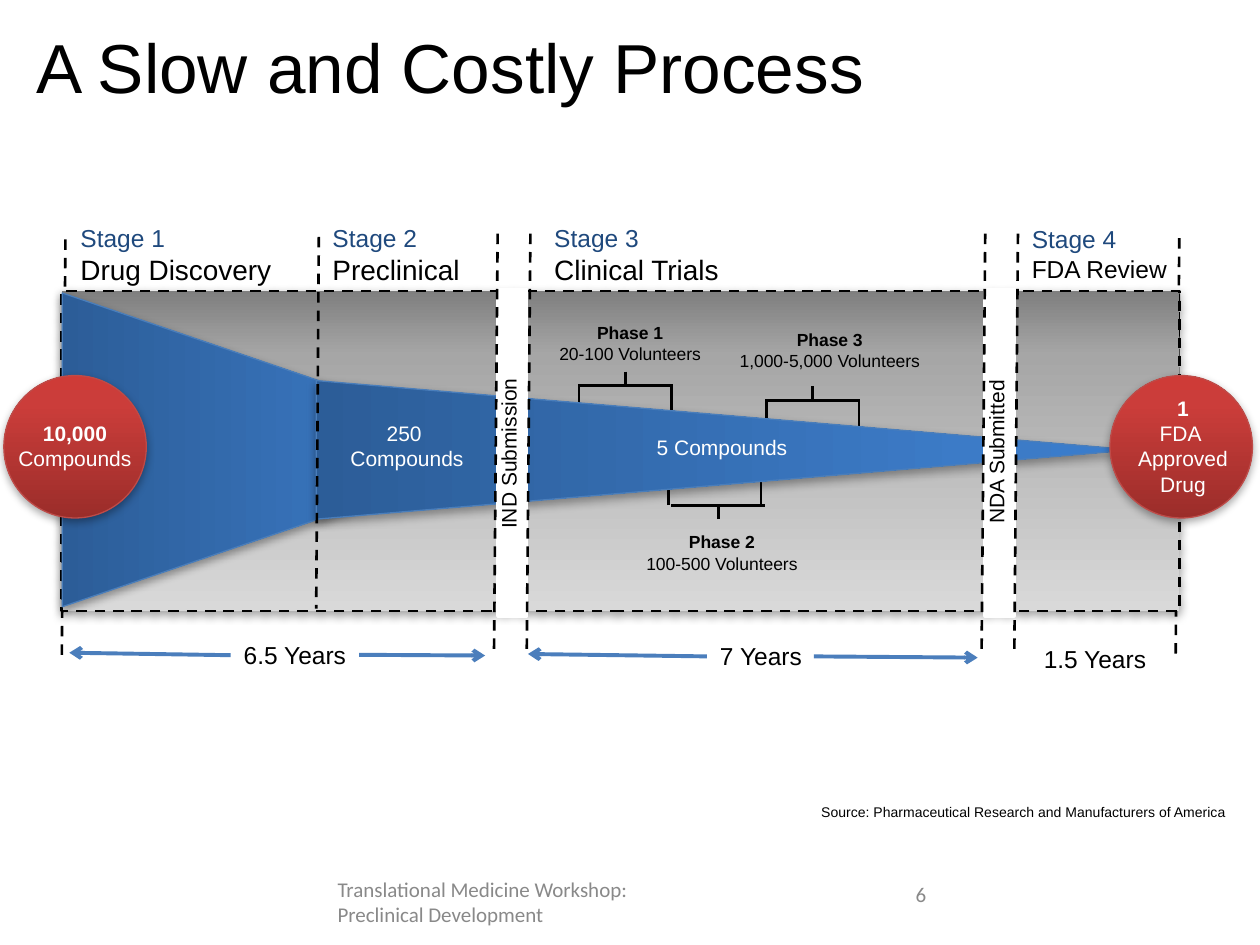
from lxml import etree
from pptx import Presentation, oxml
from pptx import util as u
from pptx.dml import color
from pptx.enum import dml, shapes, text
from pptx.oxml import ns

Pt = u.Pt
HUE = {"black": "000000", "white": "FFFFFF", "navy": "1F497D", "arrow": "4B7EBC",
       "gray": "898989", "blue": "4A7EBB", "red": "BE4B48"}
RGB = {k: color.RGBColor.from_string(v) for k, v in HUE.items()}
GRAD = {"black": ("D9D9D9", "A6A6A6", "7F7F7F"),
        "blue": ("2C5D98", "3C7BC7", "3A7CCB"),
        "red": ("9B2D2A", "CB3D3A", "CE3B37")}
KIND = shapes.MSO_SHAPE
DASH = dml.MSO_LINE.DASH
MID, LEFT = text.PP_ALIGN.CENTER, text.PP_ALIGN.LEFT
A = ns.nsdecls("a")

deck = Presentation()
deck.slide_width, deck.slide_height = Pt(720), Pt(540)
page = deck.slides.add_slide(deck.slide_layouts[6])
tree = page.shapes


def draw(x1, y1, x2, y2, hue="black", wide=1.5, dash=None, head=False):
    item = tree.add_connector(shapes.MSO_CONNECTOR.STRAIGHT, *map(Pt, (x1, y1, x2, y2)))
    item.line.color.rgb = RGB[hue]
    for key, val in {"width": Pt(wide), "dash_style": dash}.items():
        setattr(item.line, key, val)
    if head:
        etree.SubElement(item.line._get_or_add_ln(), ns.qn("a:tailEnd"), type="arrow")
    etree.SubElement(item._element.spPr, ns.qn("a:effectLst"))


def block(kind, box, hue, wide=0.75, dash=None, turn=0):
    item = tree.add_shape(kind, *map(Pt, box))
    item.rotation = turn
    item.line.color.rgb = RGB[hue]
    for key, val in {"width": Pt(wide), "dash_style": dash}.items():
        setattr(item.line, key, val)
    stops = "".join(f'<a:gs pos="{pos}"><a:srgbClr val="{tone}"/></a:gs>'
                    for pos, tone in zip((0, 80000, 100000), GRAD[hue]))
    props = item._element.spPr
    props.insert(2, oxml.parse_xml(
        f'<a:gradFill {A} rotWithShape="1"><a:gsLst>{stops}</a:gsLst>'
        '<a:lin ang="16200000" scaled="0"/></a:gradFill>'))
    props.append(oxml.parse_xml(
        f'<a:effectLst {A}><a:outerShdw blurRad="63500" dist="22860" dir="5400000" '
        f'rotWithShape="0"><a:srgbClr val="{HUE["black"]}"><a:alpha val="35000"/>'
        '</a:srgbClr></a:outerShdw></a:effectLst>'))


draw(673.9, 136.1, 671.8, 377.3, dash=DASH)
draw(37.4, 136.8, 35.3, 378, dash=DASH)
block(KIND.RECTANGLE, (35.3, 166.3, 638.6, 182.9), "black", 1.5, DASH)

for x, y, way, shift in ((357.3, 220.3, 1, 0), (410.4, 288.7, -1, -2), (464.4, 228.8, 1, 0)):
    draw(x, y - 8 * way, x, y)
    draw(x - 27, y, x + 27, y)
    for side in (-26.5, 26.5):
        draw(x + side + shift, y, x + side + shift, y + 15.8 * way)

for box in ((77, 126, 179.3, 262.1), (374.4, 23.8, 79.2, 466.6)):
    block(KIND.FLOWCHART_EXTRACT, box, "blue", turn=90)
for x in (634.3, 2.2):
    block(KIND.OVAL, (x, 214.6, 81.4, 81.4), "red")

for x in (284.4, 563):
    bar = tree.add_shape(KIND.RECTANGLE, *map(Pt, (x, 165.6, 16.6, 186.5)))
    bar.shadow.inherit = False
    bar.fill.solid()
    bar.fill.fore_color.rgb = bar.line.color.rgb = RGB["white"]
    bar.line.width = Pt(2)
    for left in (x, x + 18.7):
        draw(left, 133.5, left - 2.1, 374.6, dash=DASH)
draw(182.2, 135.4, 180.7, 347.8, dash=DASH)

for ends in ((131.8, 374.4, 39.6, 373), (205.2, 374.2, 277.2, 374.6),
             (403.9, 375.1, 301.7, 373.7), (465.1, 375.1, 558.7, 375.8)):
    draw(*ends, hue="arrow", wide=2.25, head=True)

plain = {"size": 12, "hue": "black", "bold": False}
pale = {**plain, "hue": "white"}
small = {**plain, "size": 10}
year = {**plain, "size": 14}
stage = {**year, "hue": "navy"}
topic = {**plain, "size": 16}
foot = {**plain, "hue": "gray", "font": "Calibri"}
bold = {"bold": True}

notes = [
    ((13.7, 12.2, 527.8, 50.4), LEFT, True, 0, [("A Slow and Costly Process", {**plain, "size": 39.6})]),
    ((239.8, 247.7, 101.5, 21.6), LEFT, False, 270, [("IND Submission", plain)]),
    ((520.6, 247, 97.2, 21.6), LEFT, False, 270, [("NDA Submitted", plain)]),
    ((642.2, 222.5, 67.7, 65.5), MID, False, 0,
     [("1", {**pale, **bold}), ("FDA ", pale), ("Approved", pale), ("Drug", pale)]),
    ((2.9, 236.9, 79.9, 36), MID, False, 0, [("10,000", {**pale, **bold}), ("Compounds", pale)]),
    ((175.7, 236.9, 113.8, 36), MID, True, 0, [("250 ", pale), ("Compounds", pale)]),
    ((355.7, 244.8, 113.8, 21.6), MID, True, 0, [("5 Compounds", pale)]),
    ((462.2, 455.8, 247, 17.3), LEFT, False, 0,
     [("Source: Pharmaceutical Research and Manufacturers of America", {**plain, "size": 8})]),
    ((516.2, 500.4, 167.8, 28.8), LEFT, True, 0, [("6", foot)]),
    ((185.8, 497.5, 228.2, 28.8), LEFT, True, 0,
     [("Translational Medicine Workshop: Preclinical Development", foot)]),
]
for x, y, wide, name, count in ((311.8, 180.7, 96.5, "Phase 1", "20-100"),
                                (361.4, 300.2, 102.2, "Phase 2", "100-500"),
                                (414.7, 184.3, 118.8, "Phase 3", "1,000-5,000")):
    notes.append(((x, y, wide, 31.7), MID, False, 0,
                  [(name, {**small, **bold}), (f"{count} Volunteers", small)]))
for x, y, wide, span in ((131.8, 362.2, 73.4, "6.5"), (403.9, 362.9, 61.9, "7"),
                         (589, 364.3, 73.4, "1.5")):
    notes.append(((x, y, wide, 24.5), MID, False, 0, [(f"{span} Years", year)]))
for num, (x, y, wide, name, form) in enumerate((
        (38.9, 123.8, 125.3, "Drug Discovery", topic), (182.9, 123.8, 87.8, "Preclinical", topic),
        (309.6, 123.8, 109.4, "Clinical Trials", topic), (582.5, 124.6, 92.2, "FDA Review", year)), 1):
    notes.append(((x, y, wide, 43.9), LEFT, False, 0, [(f"Stage {num}", stage), (name, form)]))

for box, align, wrap, turn, lines in notes:
    note = tree.add_textbox(*map(Pt, box))
    note.rotation = turn
    frame = note.text_frame
    frame.word_wrap = wrap
    if note.top < Pt(20):
        frame.vertical_anchor = text.MSO_ANCHOR.MIDDLE
    for num, (words, form) in enumerate(lines):
        para = frame.add_paragraph() if num else frame.paragraphs[0]
        para.alignment = align
        run = para.add_run()
        run.text = words
        run.font.color.rgb = RGB[form["hue"]]
        for key, val in {"size": Pt(form["size"]), "bold": form["bold"],
                         "name": form.get("font", "Arial")}.items():
            setattr(run.font, key, val)

deck.save("out.pptx")
